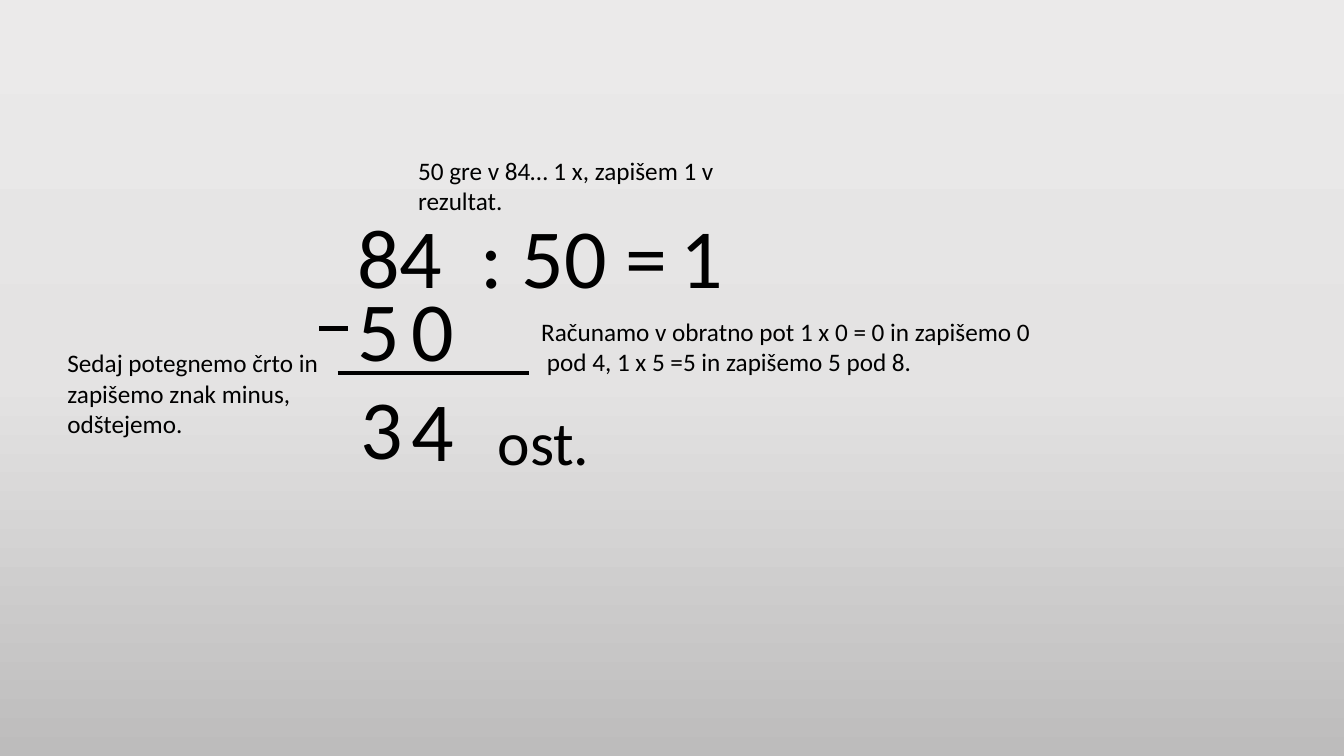
from copy import deepcopy
from typing import NamedTuple

from lxml import etree
from pptx import Presentation
from pptx.dml.color import RGBColor
from pptx.enum.shapes import MSO_CONNECTOR
from pptx.enum.text import MSO_AUTO_SIZE
from pptx.oxml.ns import qn
from pptx.slide import Slide
from pptx.util import Cm, Pt

STRAIGHT = MSO_CONNECTOR.STRAIGHT
GROW = MSO_AUTO_SIZE.SHAPE_TO_FIT_TEXT
BLANK_LAYOUT = 6
FONT = "Calibri"
INK = "000000"
DIGIT_PT, REMAINDER_PT, NOTE_PT = 60, 44, 18
DIGIT_HEIGHT = 2.82
DIVIDEND_TOP, PRODUCT_TOP = 5.03, 6.88
BACKGROUND_STOPS = [(0, "EBEAEA"), (0.5, "E4E3E3"), (1, "BDBCBC")]


class Label(NamedTuple):
    """Text with its box in centimetres and its size in points."""
    text: str
    left: float
    top: float
    width: float
    height: float = DIGIT_HEIGHT
    size: int = DIGIT_PT


class Stroke(NamedTuple):
    """Horizontal line in centimetres."""
    start: float
    end: float
    y: float


CALCULATION = [
    Label("84  : 50 =", 8.76, DIVIDEND_TOP, 8.59),
    Label("1", 16.89, DIVIDEND_TOP, 1.85),
    Label("0", 10.11, PRODUCT_TOP, 1.83),
    Label("5", 8.76, PRODUCT_TOP, 1.5),
    Label("4", 10.13, 9.4, 2.16),
    Label("3", 8.84, 9.35, 2.16),
    Label("ost.", 12.29, 10.06, 3.02, 2.13, REMAINDER_PT),
]
EXPLANATIONS = [
    Label("50 gre v 84… 1 x, zapišem 1 v rezultat.",
          10.29, 3.78, 8.66, 1.8, NOTE_PT),
    Label("Računamo v obratno pot 1 x 0 = 0 in zapišemo 0  pod 4, "
          "1 x 5 =5 in zapišemo 5 pod 8.",
          13.39, 7.85, 12.83, 1.8, NOTE_PT),
    Label("Sedaj potegnemo črto in zapišemo znak minus, odštejemo.",
          1.45, 8.64, 8.66, 2.57, NOTE_PT),
]
SUBTRACTION_RULE = Stroke(8.51, 13.34, 9.4)
MINUS_SIGN = Stroke(8.05, 8.76, 8.28)


def rgb(value: str) -> RGBColor:
    return RGBColor.from_string(value)


def paint_background(slide: Slide) -> None:
    fill = slide.background.fill
    fill.gradient()
    fill.gradient_angle = 270
    stop_list = slide.element.find(".//" + qn("a:gsLst"))
    stop_list.append(deepcopy(stop_list[0]))
    for stop, (position, color) in zip(fill.gradient_stops, BACKGROUND_STOPS):
        stop.position = position
        stop.color.rgb = rgb(color)


def add_label(slide: Slide, label: Label) -> None:
    box = slide.shapes.add_textbox(Cm(label.left), Cm(label.top),
                                   Cm(label.width), Cm(label.height))
    frame = box.text_frame
    frame.word_wrap = True
    frame.auto_size = GROW
    run = frame.paragraphs[0].add_run()
    run.text = label.text
    run.font.name = FONT
    run.font.size = Pt(label.size)
    run.font.color.rgb = rgb(INK)


def add_stroke(slide: Slide, stroke: Stroke) -> None:
    line = slide.shapes.add_connector(STRAIGHT, Cm(stroke.start), Cm(stroke.y),
                                      Cm(stroke.end), Cm(stroke.y))
    line.line.color.rgb = rgb(INK)
    line.line.width = Pt(3)
    etree.SubElement(line.element.spPr, qn("a:effectLst"))


def main() -> None:
    deck = Presentation()
    deck.slide_width, deck.slide_height = Cm(33.87), Cm(19.05)
    slide = deck.slides.add_slide(deck.slide_layouts[BLANK_LAYOUT])
    paint_background(slide)
    for label in CALCULATION + EXPLANATIONS:
        add_label(slide, label)
    for stroke in (SUBTRACTION_RULE, MINUS_SIGN):
        add_stroke(slide, stroke)
    deck.save("out.pptx")


if __name__ == "__main__":
    main()
